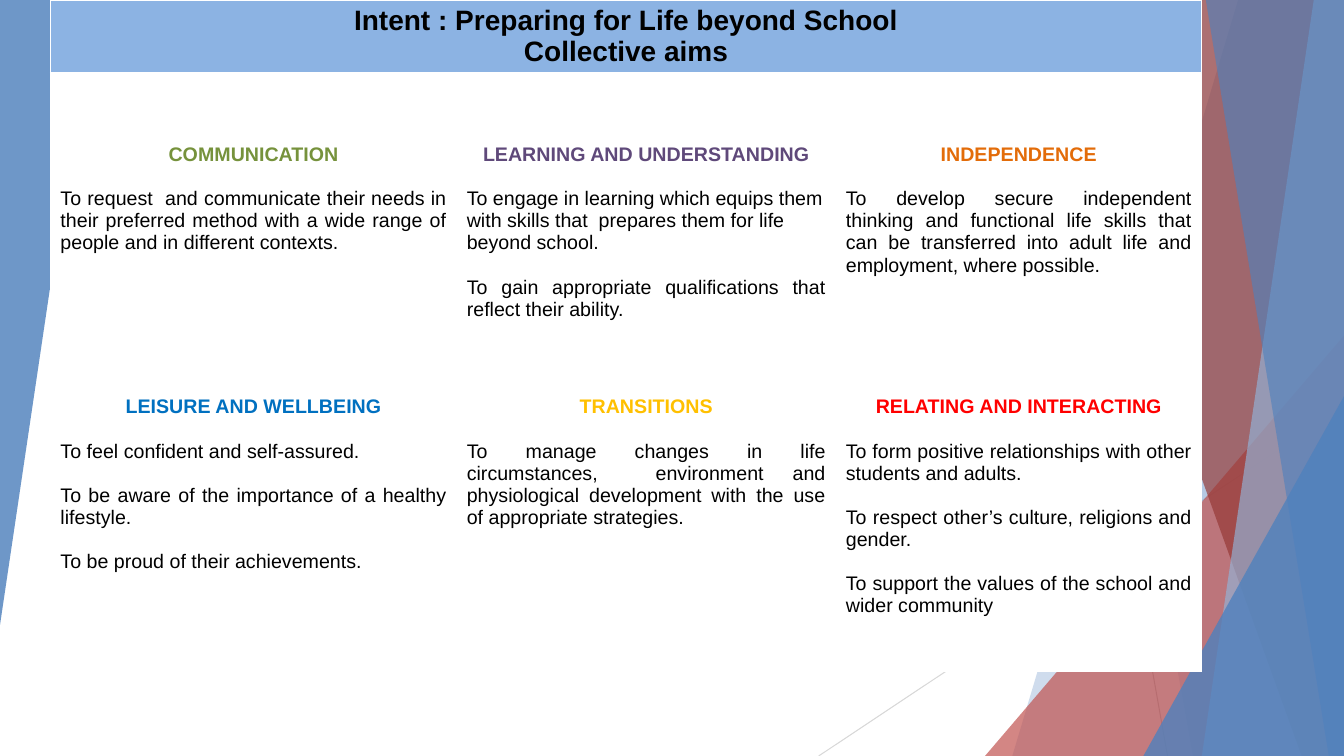
from lxml import etree
from pptx import Presentation
from pptx.dml.color import RGBColor
from pptx.enum.shapes import MSO_CONNECTOR, MSO_SHAPE
from pptx.enum.text import PP_ALIGN
from pptx.oxml.ns import qn
from pptx.util import Inches, Pt

CENTER, JUSTIFY, LEFT = PP_ALIGN.CENTER, PP_ALIGN.JUSTIFY, PP_ALIGN.LEFT
STRAIGHT, TRIANGLE = MSO_CONNECTOR.STRAIGHT, MSO_SHAPE.RIGHT_TRIANGLE
TRIANGLE = MSO_SHAPE.ISOSCELES_TRIANGLE

BLACK = RGBColor(0x00, 0x00, 0x00)
WHITE = RGBColor(0xFF, 0xFF, 0xFF)
BANNER = RGBColor(0x8C, 0xB3, 0xE3)
BLUE = RGBColor(0x4F, 0x81, 0xBD)
PALE_BLUE = RGBColor(0x93, 0xB3, 0xD7)
RED = RGBColor(0xC0, 0x50, 0x4D)
DARK_RED = RGBColor(0x95, 0x37, 0x34)
GREY = RGBColor(0xBF, 0xBF, 0xBF)
LIGHT_GREY = RGBColor(0xD8, 0xD8, 0xD8)
GREEN = RGBColor(0x76, 0x92, 0x3C)
PURPLE = RGBColor(0x5F, 0x49, 0x7A)
ORANGE = RGBColor(0xE3, 0x6C, 0x09)
BRIGHT_BLUE = RGBColor(0x00, 0x70, 0xC0)
AMBER = RGBColor(0xFF, 0xC0, 0x00)
BRIGHT_RED = RGBColor(0xFF, 0x00, 0x00)

# The slide is a grid of one-inch columns and rows.
COLUMNS, ROWS = 13.33, 7.5
TABLE_LEFT = 0.5
TABLE_COLUMNS = (4.03, 3.76, 3.63)
TABLE_ROWS = (0.71, 3.16, 2.78)
LINE_HEIGHT = Pt(15.8)
CELL_TOP = Inches(0.05)

BANNER_LINES = ("Intent : Preparing for Life beyond School", "Collective aims")
# Each aim: heading, heading colour, then (text, alignment) pairs.
AIMS = (
    (
        ("COMMUNICATION", GREEN, (
            ("To request  and communicate their needs in their preferred method "
             "with a wide range of people and in different contexts.", JUSTIFY),)),
        ("LEARNING AND UNDERSTANDING", PURPLE, (
            ("To engage in learning which equips them with skills that  prepares "
             "them for life beyond school.", LEFT),
            ("To gain appropriate qualifications that reflect their ability.", JUSTIFY))),
        ("INDEPENDENCE", ORANGE, (
            ("To develop secure independent thinking and functional life skills that "
             "can be transferred into adult life and employment, where possible.", JUSTIFY),)),
    ),
    (
        ("LEISURE AND WELLBEING", BRIGHT_BLUE, (
            ("To feel confident and self-assured.", JUSTIFY),
            ("To be aware of the importance of a healthy lifestyle.", JUSTIFY),
            ("To be proud of their achievements.", JUSTIFY))),
        ("TRANSITIONS", AMBER, (
            ("To manage changes in life circumstances,  environment and physiological "
             "development with the use of appropriate strategies.", JUSTIFY),)),
        ("RELATING AND INTERACTING", BRIGHT_RED, (
            ("To form positive relationships with other students and adults.", JUSTIFY),
            ("To respect other’s culture, religions and gender.", JUSTIFY),
            ("To support the values of the school and wider community", JUSTIFY))),
    ),
)


def paint(shape, color, opacity):
    """Give a shape a see-through fill with no outline or shadow."""
    shape.shadow.inherit = False
    shape.line.fill.background()
    shape.fill.solid()
    shape.fill.fore_color.rgb = color
    color_element = shape._element.spPr.find(qn("a:solidFill"))[0]
    etree.SubElement(color_element, qn("a:alpha"), val=str(opacity * 1000))


def add_line(slide, start, end, color):
    line = slide.shapes.add_connector(STRAIGHT, *map(Inches, start + end))
    line.line.color.rgb = color
    line.line.width = Pt(0.75)
    etree.SubElement(line._element.spPr, qn("a:effectLst"))


def add_band(slide, top_left, bottom_left, color, opacity):
    """Fill from a slanted left edge to the right edge of the slide."""
    builder = slide.shapes.build_freeform(Inches(top_left), 0)
    corners = ((COLUMNS, 0), (COLUMNS, ROWS), (bottom_left, ROWS))
    builder.add_line_segments([(Inches(x), Inches(y)) for x, y in corners])
    paint(builder.convert_to_shape(), color, opacity)


def add_triangle(slide, box, color, opacity, rotation=0):
    triangle = slide.shapes.add_shape(TRIANGLE, *map(Inches, box))
    triangle.adjustments[0] = 1
    triangle.rotation = rotation
    paint(triangle, color, opacity)


def add_backdrop(slide):
    add_line(slide, (10.25, 0), (11.58, ROWS), GREY)
    add_line(slide, (COLUMNS, 4.03), (8.12, ROWS), LIGHT_GREY)
    add_band(slide, 12.28, 10.04, BLUE, 27)
    add_band(slide, 10.5, 11.83, BLUE, 20)
    add_triangle(slide, (9.77, 3.33, 3.56, 4.17), RED, 69)
    add_band(slide, 10.21, 12.91, DARK_RED, 67)
    add_band(slide, 13.03, 11.92, PALE_BLUE, 67)
    add_band(slide, 11.96, 13.18, BLUE, 62)
    add_triangle(slide, (11.34, 3.93, 1.99, 3.57), BLUE, 80)
    add_triangle(slide, (0, 0, 0.92, 6.2), BLUE, 82, rotation=180)


def format_cell(cell, fill):
    cell.fill.solid()
    cell.fill.fore_color.rgb = fill
    properties = cell._tc.get_or_add_tcPr()
    for position, side in enumerate(("lnL", "lnR", "lnT", "lnB")):
        border = etree.Element(qn("a:" + side), w=str(Pt(1)))
        solid = etree.SubElement(border, qn("a:solidFill"))
        etree.SubElement(solid, qn("a:srgbClr"), val=str(WHITE))
        properties.insert(position, border)


def write_paragraph(cell, index, text, alignment, size, color, bold, gap=0):
    frame = cell.text_frame
    paragraph = frame.paragraphs[0] if index == 0 else frame.add_paragraph()
    paragraph.alignment = alignment
    paragraph.space_before = gap
    run = paragraph.add_run()
    run.text = text
    run.font.color.rgb = color
    for name, value in {"name": "Arial", "size": Pt(size), "bold": bold}.items():
        setattr(run.font, name, value)


def write_aim(cell, heading, color, statements):
    format_cell(cell, WHITE)
    write_paragraph(cell, 0, heading, CENTER, 14, color, True)
    for index, (text, alignment) in enumerate(statements, start=1):
        write_paragraph(cell, index, text, alignment, 14, BLACK, False, LINE_HEIGHT)


def add_aims_table(slide):
    box = (TABLE_LEFT, 0, sum(TABLE_COLUMNS), sum(TABLE_ROWS))
    frame = slide.shapes.add_table(len(TABLE_ROWS), len(TABLE_COLUMNS), *map(Inches, box))
    table = frame.table
    table.first_row = table.horz_banding = False
    for column, width in zip(table.columns, TABLE_COLUMNS):
        column.width = Inches(width)
    for row, height in zip(table.rows, TABLE_ROWS):
        row.height = Inches(height)

    banner = table.cell(0, 0)
    banner.merge(table.cell(0, len(TABLE_COLUMNS) - 1))
    format_cell(banner, BANNER)
    for index, text in enumerate(BANNER_LINES):
        write_paragraph(banner, index, text, CENTER, 20, BLACK, True)

    for row_index, aims in enumerate(AIMS, start=1):
        for column_index, aim in enumerate(aims):
            cell = table.cell(row_index, column_index)
            write_aim(cell, *aim)
            # The first row of aims starts three lines lower.
            cell.margin_top = CELL_TOP + (3 * LINE_HEIGHT if row_index == 1 else 0)


def main():
    presentation = Presentation()
    presentation.slide_width = Inches(COLUMNS)
    presentation.slide_height = Inches(ROWS)
    slide = presentation.slides.add_slide(presentation.slide_layouts.get_by_name("Blank"))
    add_backdrop(slide)
    add_aims_table(slide)
    presentation.save("out.pptx")


if __name__ == "__main__":
    main()
